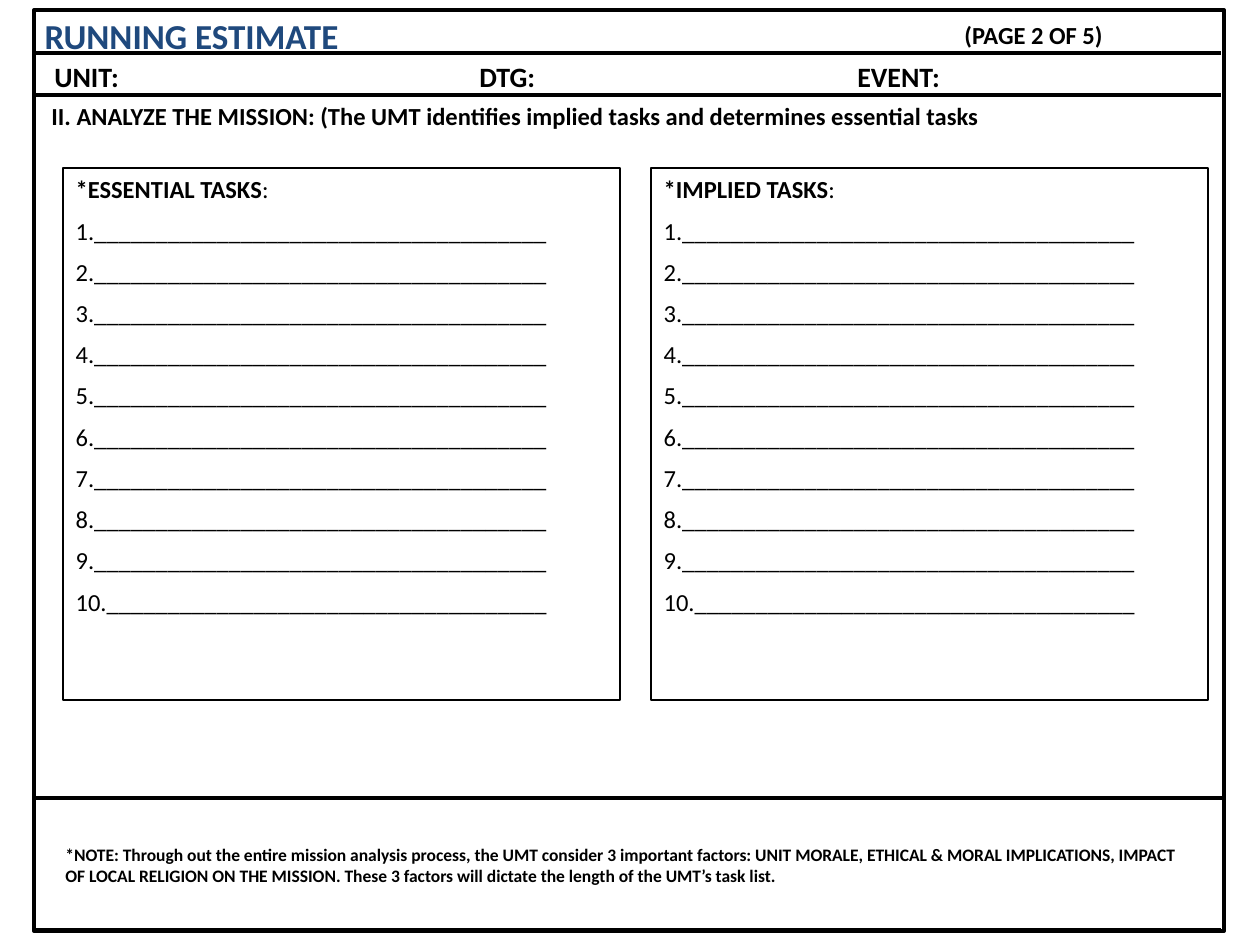
from lxml.etree import SubElement
from pptx import Presentation
from pptx.dml.color import RGBColor
from pptx.enum.shapes import MSO_CONNECTOR, MSO_SHAPE
from pptx.enum.text import MSO_ANCHOR, MSO_AUTO_SIZE, PP_ALIGN
from pptx.oxml.ns import qn
from pptx.util import Emu, Pt

PX = 914400 // 126
FONT, BLACK, BLUE = "Calibri", "000000", "1F497D"

TITLE = "RUNNING ESTIMATE"
PAGE_NUMBER = "(PAGE 2 OF 5)"
FIELDS = ["UNIT:", "DTG:", "EVENT:"]
FIELD_TABS = [425, 803]
SECTION = "II. ANALYZE THE MISSION: (The UMT identifies implied tasks and determines essential tasks"
NOTE = ("*NOTE: Through out the entire mission analysis process, the UMT consider 3 important factors: "
        "UNIT MORALE, ETHICAL & MORAL IMPLICATIONS, IMPACT OF LOCAL RELIGION ON THE MISSION. "
        "These 3 factors will dictate the length of the UMT’s task list.")
TASK_HEADINGS = ["*ESSENTIAL TASKS", "*IMPLIED TASKS"]
TASK_COUNT, ENTRY_LENGTH = 10, 39

FRAME = (34, 10, 1190, 921)
RULES = [(33, 53, 1221), (34, 95, 1221), (36, 798, 1224), (34, 930, 1221)]  # left, y, right
TASK_BOX = (63, 168, 557, 532)
TASK_STEP = 588


def px(*values):
    return [Emu(value * PX) for value in values]


def color(code):
    return RGBColor.from_string(code)


def place(shape, area):
    shape.left, shape.top, shape.width, shape.height = px(*area)


def outline(shape, width):
    shape.line.color.rgb = color(BLACK)
    shape.line.width = Pt(width)


def write(para, text, size=14, bold=True, ink=BLACK):
    span = para.add_run()
    span.text = text
    span.font.name, span.font.size, span.font.bold = FONT, Pt(size), bold
    span.font.color.rgb = color(ink)


def prepare(box, wrap=True, anchor=MSO_ANCHOR.TOP):
    frame = box.text_frame
    frame.word_wrap, frame.vertical_anchor = wrap, anchor
    frame.auto_size = MSO_AUTO_SIZE.NONE
    return frame


def add_text(page, area, text, wrap=True, **style):
    box = page.shapes.add_textbox(*px(*area))
    para = prepare(box, wrap).paragraphs[0]
    write(para, text, **style)
    return para


def add_rule(page, left, y, right):
    rule = page.shapes.add_connector(MSO_CONNECTOR.STRAIGHT, *px(left, y, right, y))
    outline(rule, 2.25)
    SubElement(rule._element.spPr, qn("a:effectLst"))


def set_tabs(para, stops):
    tabs = SubElement(para._p.get_or_add_pPr(), qn("a:tabLst"))
    for stop in px(*stops):
        SubElement(tabs, qn("a:tab"), pos=str(stop), algn="l")


def format_task(para):
    """Drop the placeholder's bullet and indent, and space the lines."""
    para.space_before = Pt(6.75)
    properties = para._p.get_or_add_pPr()
    properties.set("marL", "0")
    properties.set("indent", "0")
    SubElement(properties, qn("a:buNone"))


def fill_tasks(box, heading):
    outline(box, 0.75)
    frame = prepare(box)
    first = frame.paragraphs[0]
    write(first, heading)
    write(first, ":", bold=False)
    for number in range(1, TASK_COUNT + 1):
        write(frame.add_paragraph(), f"{number}.".ljust(ENTRY_LENGTH, "_"), bold=False)
    for para in frame.paragraphs:
        format_task(para)


def main():
    deck = Presentation()
    deck.slide_width, deck.slide_height = px(1260, 945)
    page = deck.slides.add_slide(deck.slide_layouts.get_by_name("Two Content"))
    title, *task_boxes = page.placeholders

    border = page.shapes.add_shape(MSO_SHAPE.RECTANGLE, *px(*FRAME))
    border.fill.background()
    border.shadow.inherit = False
    outline(border, 2.25)
    for rule in RULES:
        add_rule(page, *rule)

    place(title, (32, 8, 1008, 55))
    para = prepare(title, anchor=MSO_ANCHOR.MIDDLE).paragraphs[0]
    para.alignment = PP_ALIGN.LEFT
    write(para, TITLE, size=20, ink=BLUE)

    left, top, width, height = TASK_BOX
    for column, (box, heading) in enumerate(zip(task_boxes, TASK_HEADINGS)):
        place(box, (left + column * TASK_STEP, top, width, height))
        fill_tasks(box, heading)

    add_text(page, (952, 14, 193, 43), PAGE_NUMBER, wrap=False)
    set_tabs(add_text(page, (42, 53, 1176, 35), "\t".join(FIELDS), size=16), FIELD_TABS)
    add_text(page, (39, 95, 1179, 73), SECTION)
    add_text(page, (53, 838, 1155, 57), NOTE, size=10)

    deck.save("out.pptx")


if __name__ == "__main__":
    main()
